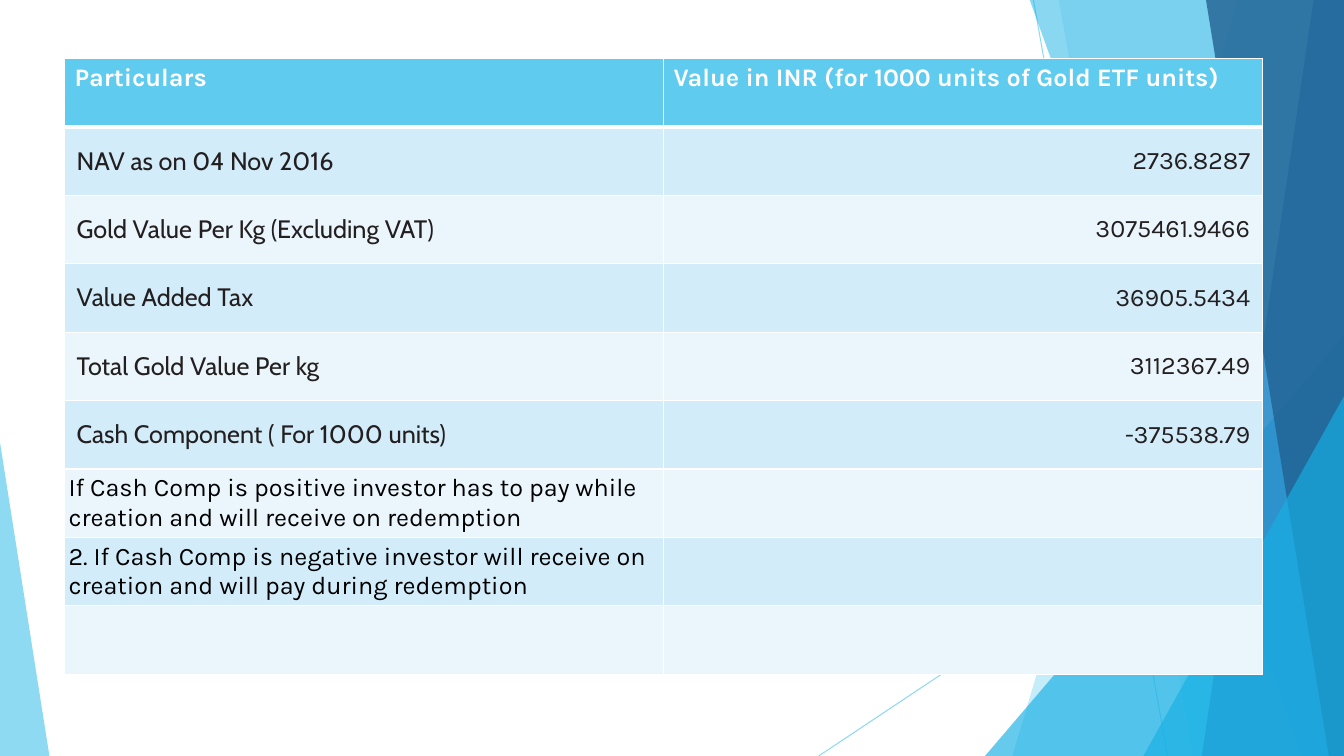
from lxml import etree
from pptx import Presentation
from pptx.dml.color import RGBColor
from pptx.enum.shapes import MSO_CONNECTOR, MSO_SHAPE
from pptx.enum.text import MSO_ANCHOR, PP_ALIGN
from pptx.oxml.ns import qn
from pptx.util import Inches, Pt

STRAIGHT = MSO_CONNECTOR.STRAIGHT
TRIANGLE = MSO_SHAPE.ISOSCELES_TRIANGLE
MIDDLE, TOP = MSO_ANCHOR.MIDDLE, MSO_ANCHOR.TOP
LEFT, RIGHT = PP_ALIGN.LEFT, PP_ALIGN.RIGHT

WIDTH, HEIGHT = 13.33, 7.5
SKY, CYAN, BLUE, NAVY = "5FCBEF", "17B0E4", "2E83C3", "226292"
WHITE, INK, BLACK = "FFFFFF", "231F20", "000000"
ROW_FILLS = ("D2ECF9", "EAF6FC")

HEADINGS = ("Particulars", "Value in INR (for 1000 units of Gold ETF units)")
VALUES = (
    ("NAV as on 04 Nov 2016", "2736.8287"),
    ("Gold Value Per Kg (Excluding VAT)", "3075461.9466"),
    ("Value Added Tax", "36905.5434"),
    ("Total Gold Value Per kg", "3112367.49"),
    ("Cash Component ( For 1000 units)", "-375538.79"),
)
NOTES = (
    "If Cash Comp is positive investor has to pay while creation and will receive on redemption",
    "2. If Cash Comp is negative investor will receive on creation and will pay during redemption",
)


def rgb(color):
    return RGBColor.from_string(color)


def set_fill(fill, color, opacity=100):
    fill.solid()
    fill.fore_color.rgb = rgb(color)
    if opacity < 100:
        set_opacity(fill, opacity)


def set_opacity(fill, opacity):
    color_element = fill._xPr.find(".//" + qn("a:srgbClr"))
    etree.SubElement(color_element, qn("a:alpha"), val=str(opacity * 1000))


def finish_shape(shape, color, opacity):
    shape.shadow.inherit = False
    set_fill(shape.fill, color, opacity)
    shape.line.fill.background()


def add_thin_line(slide, start, end):
    line = slide.shapes.add_connector(STRAIGHT, *map(Inches, start + end))
    line.line.width = Pt(0.75)
    set_fill(line.line.fill, SKY)
    set_opacity(line.line.fill, 70)
    etree.SubElement(line._element.spPr, qn("a:effectLst"))


def add_band(slide, top_left, bottom_left, color, opacity):
    """Full-height band with a slanted left side, reaching the right edge."""
    top = -0.01
    corners = ((WIDTH, top), (WIDTH, HEIGHT), (bottom_left, HEIGHT))
    builder = slide.shapes.build_freeform(Inches(top_left), Inches(top), scale=1.0)
    builder.add_line_segments([tuple(map(Inches, corner)) for corner in corners], close=True)
    finish_shape(builder.convert_to_shape(), color, opacity)


def add_corner_triangle(slide, left, top, width, apex, color, opacity):
    """Triangle standing on the bottom edge; apex 0 is left, 1 is right."""
    box = map(Inches, (left, top, width, HEIGHT - top))
    triangle = slide.shapes.add_shape(TRIANGLE, *box)
    triangle.adjustments[0] = apex
    finish_shape(triangle, color, opacity)


def add_backdrop(slide):
    add_thin_line(slide, (10.25, 0), (11.58, HEIGHT))
    add_thin_line(slide, (WIDTH, 4.03), (8.12, HEIGHT))
    add_band(slide, 12.28, 10.04, SKY, 36)
    add_band(slide, 10.5, 11.83, SKY, 20)
    add_corner_triangle(slide, 9.77, 3.33, 3.56, 1, CYAN, 66)
    add_band(slide, 10.21, 12.91, CYAN, 50)
    add_band(slide, 13.03, 11.92, BLUE, 70)
    add_band(slide, 11.96, 13.18, NAVY, 80)
    add_corner_triangle(slide, 11.34, 3.93, 1.99, 1, CYAN, 66)
    add_corner_triangle(slide, 0, 4.39, 0.49, 0, SKY, 70)


def set_borders(cell, widths):
    """White borders; widths in points for left, right, top and bottom."""
    properties = cell._tc.get_or_add_tcPr()
    for index, (side, width) in enumerate(zip("LRTB", widths)):
        line = etree.Element(qn("a:ln" + side), w=str(Pt(width)))
        fill = etree.SubElement(line, qn("a:solidFill"))
        etree.SubElement(fill, qn("a:srgbClr"), val=WHITE)
        properties.insert(index, line)


def write_cell(cell, text, font, color, inset, bold=False, align=LEFT, anchor=MIDDLE):
    horizontal, vertical = map(Inches, inset)
    cell.margin_left = cell.margin_right = horizontal
    cell.margin_top = cell.margin_bottom = vertical
    cell.vertical_anchor = anchor
    cell.text_frame.text = text
    paragraph = cell.text_frame.paragraphs[0]
    paragraph.alignment = align
    run_font = paragraph.runs[0].font
    run_font.name, run_font.size, run_font.bold = font, Pt(18), bold
    run_font.color.rgb = rgb(color)


def add_value_table(slide, left, top, width, height):
    row_count = 1 + len(VALUES) + len(NOTES) + 1
    box = map(Inches, (left, top, width, height))
    table = slide.shapes.add_table(row_count, 2, *box).table
    for row in range(row_count):
        for column in range(2):
            cell = table.cell(row, column)
            set_fill(cell.fill, ROW_FILLS[(row - 1) % 2] if row else SKY)
            set_borders(cell, (1, 1, 3 if row == 1 else 1, 1 if row else 3))

    for column, heading in enumerate(HEADINGS):
        write_cell(table.cell(0, column), heading, "Karla", WHITE, (0.1, 0.05), True, anchor=TOP)
    for row, (label, value) in enumerate(VALUES, start=1):
        write_cell(table.cell(row, 0), label, "Cabin", INK, (0.12, 0.08))
        write_cell(table.cell(row, 1), value, "Karla", INK, (0.12, 0.08), align=RIGHT)
    for row, note in enumerate(NOTES, start=1 + len(VALUES)):
        write_cell(table.cell(row, 0), note, "Karla", BLACK, (0.04, 0.04))


def main():
    presentation = Presentation()
    presentation.slide_width = Inches(WIDTH)
    presentation.slide_height = Inches(HEIGHT)
    blank_layout = presentation.slide_layouts[6]
    slide = presentation.slides.add_slide(blank_layout)
    set_fill(slide.background.fill, WHITE)
    add_backdrop(slide)
    add_value_table(slide, 0.64, 0.58, 11.88, 6.11)
    presentation.save("out.pptx")


if __name__ == "__main__":
    main()
